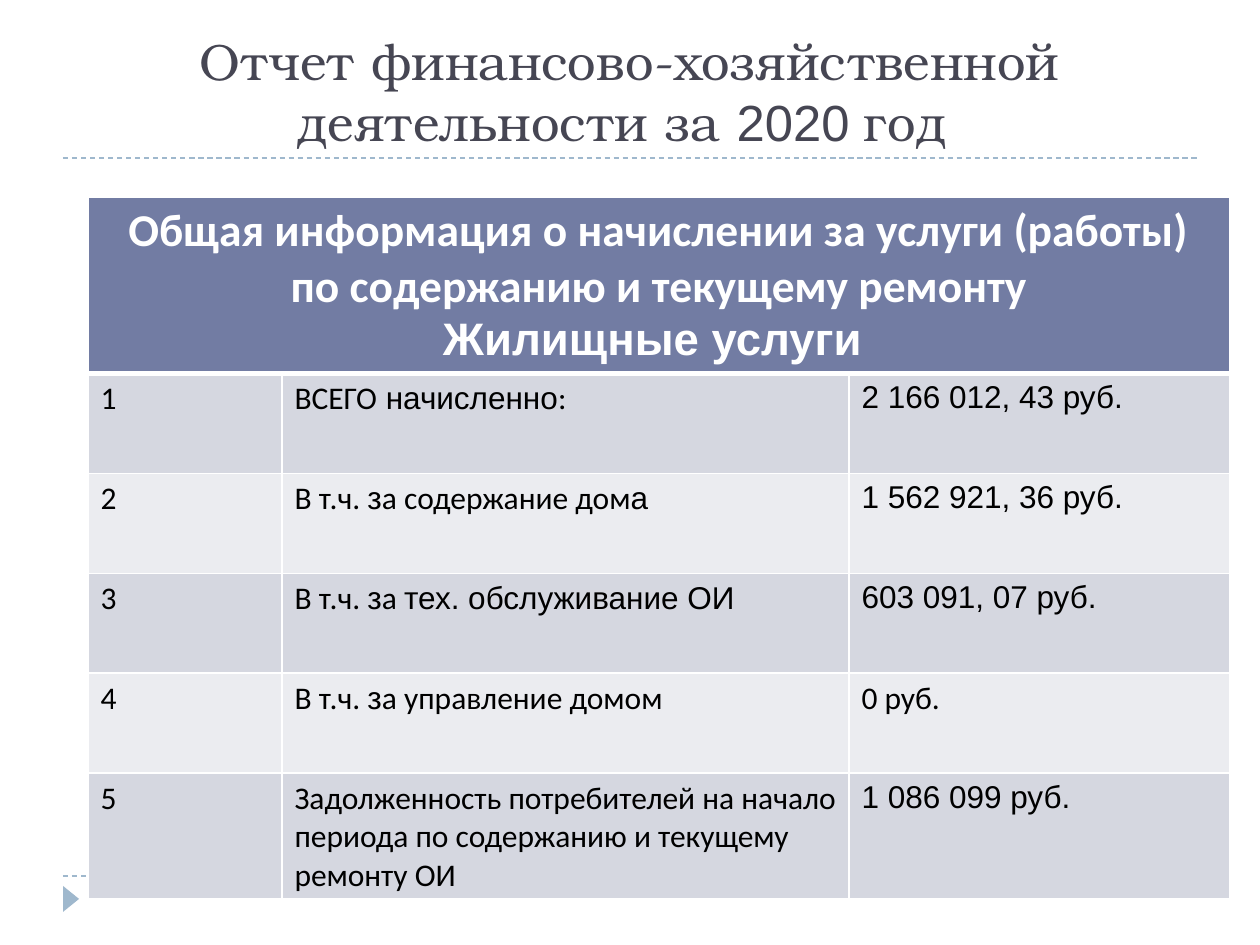
from dataclasses import dataclass

from lxml import etree
from pptx import Presentation
from pptx import util as u
from pptx.dml.color import RGBColor
from pptx.enum import dml, shapes, text
from pptx.oxml import ns

PX = 914400 // 126
SLIDE_SIZE = (1260, 945)


@dataclass(frozen=True)
class Theme:
    serif: str = "TeX Gyre Bonum"
    sans: str = "Arial"
    body: str = "Calibri"
    title: str = "464653"
    accent: str = "9FB8CD"
    header: str = "727CA3"
    bands: tuple = ("D5D7E0", "EBECF0")
    white: str = "FFFFFF"
    black: str = "000000"
    title_size: int = 29
    header_size: int = 26
    cell_size: int = 18


THEME = Theme()
SERIF, SANS, BODY = THEME.serif, THEME.sans, THEME.body

# A paragraph is a list of (wording, font) runs.
TITLE = [[("Отчет финансово-хозяйственной деятельности за ", SERIF),
          ("2020 ", SANS), ("год ", SERIF)]]
HEADER = [
    [("Общая информация о начислении за услуги (работы) "
      "по содержанию и текущему ремонту", BODY)],
    [("Жилищные услуги ", SANS)],
]
INCLUDING = [("В т.ч. ", BODY), ("з", SANS)]
ROWS = [
    ([("ВСЕГО", BODY), (" начисленно", SANS), (":", BODY)],
     [("2 166 012, 43 руб.", SANS)]),
    (INCLUDING + [("а содержание дом", BODY), ("а", SANS)],
     [("1 562 921, 36 руб.", SANS)]),
    (INCLUDING + [("а ", BODY), ("тех. обслуживание ОИ", SANS)],
     [("603 091, 07 руб.", SANS)]),
    (INCLUDING + [("а управление домом", BODY)],
     [("0 руб.", BODY)]),
    ([("Задолженность потребителей на начало периода по содержанию "
       "и текущему ремонту ОИ", BODY)],
     [("1 086 099 руб.", SANS)]),
]

TITLE_BOX = (63, 32, 1134, 126)
RULES_Y = (876, 158)
RULE_X = (63, 1197)
MARKER_BOX = (58, 891, 26, 16)
TABLE_AT = (88, 197)
COLUMNS = (194, 567, 381)
HEADER_HEIGHT, ROW_HEIGHT = 146, 100


def px(*values):
    return [u.Emu(value * PX) for value in values]


def write(frame, paragraphs, *, size, color, bold=False, align=None):
    frame.word_wrap = True
    for index, runs in enumerate(paragraphs):
        paragraph = frame.add_paragraph() if index else frame.paragraphs[0]
        paragraph.alignment = align
        for wording, font in runs:
            run = paragraph.add_run()
            run.text = wording
            run.font.name = font
            run.font.size = u.Pt(size)
            run.font.bold = bold
            run.font.color.rgb = RGBColor.from_string(color)


def add_rule(slide, y):
    left, right = RULE_X
    rule = slide.shapes.add_connector(
        shapes.MSO_CONNECTOR.STRAIGHT, *px(left, y, right, y))
    rule.line.color.rgb = RGBColor.from_string(THEME.accent)
    rule.line.width = u.Pt(0.75)
    rule.line.dash_style = dml.MSO_LINE.DASH
    etree.SubElement(rule._element.spPr, ns.qn("a:effectLst"))


def add_marker(slide):
    marker = slide.shapes.add_shape(
        shapes.MSO_SHAPE.ISOSCELES_TRIANGLE, *px(*MARKER_BOX))
    marker.rotation = 90
    marker.shadow.inherit = False
    marker.fill.solid()
    marker.fill.fore_color.rgb = RGBColor.from_string(THEME.accent)
    marker.line.fill.background()


def paint_cell(cell, fill, top=1, bottom=1):
    """Fill a cell and give it white borders, widths in points."""
    cell.fill.solid()
    cell.fill.fore_color.rgb = RGBColor.from_string(fill)
    properties = cell._tc.get_or_add_tcPr()
    widths = {"lnL": 1, "lnR": 1, "lnT": top, "lnB": bottom}
    for index, (side, width) in enumerate(widths.items()):
        border = etree.Element(ns.qn(f"a:{side}"), w=str(u.Pt(width)))
        solid = etree.SubElement(border, ns.qn("a:solidFill"))
        etree.SubElement(solid, ns.qn("a:srgbClr"), val=THEME.white)
        properties.insert(index, border)


def add_report_table(slide):
    heights = [HEADER_HEIGHT] + [ROW_HEIGHT] * len(ROWS)
    table = slide.shapes.add_table(
        len(heights), len(COLUMNS),
        *px(*TABLE_AT, sum(COLUMNS), sum(heights))).table
    for column, width in zip(table.columns, px(*COLUMNS)):
        column.width = width
    for row, height in zip(table.rows, px(*heights)):
        row.height = height

    for cell in table.rows[0].cells:
        paint_cell(cell, THEME.header, bottom=3)
    table.cell(0, 0).merge(table.cell(0, len(COLUMNS) - 1))
    write(table.cell(0, 0).text_frame, HEADER, size=THEME.header_size,
          color=THEME.white, bold=True, align=text.PP_ALIGN.CENTER)

    for number, (label, amount) in enumerate(ROWS, start=1):
        contents = ([(str(number), BODY)], label, amount)
        for cell, runs in zip(table.rows[number].cells, contents):
            paint_cell(cell, THEME.bands[(number - 1) % 2],
                       top=3 if number == 1 else 1)
            write(cell.text_frame, [runs], size=THEME.cell_size,
                  color=THEME.black)


def main():
    presentation = Presentation()
    presentation.slide_width, presentation.slide_height = px(*SLIDE_SIZE)
    slide = presentation.slides.add_slide(presentation.slide_layouts[6])
    for y in RULES_Y:
        add_rule(slide, y)
    add_marker(slide)
    title = slide.shapes.add_textbox(*px(*TITLE_BOX)).text_frame
    title.vertical_anchor = text.MSO_ANCHOR.BOTTOM
    write(title, TITLE, size=THEME.title_size, color=THEME.title,
          align=text.PP_ALIGN.CENTER)
    add_report_table(slide)
    presentation.save("out.pptx")


if __name__ == "__main__":
    main()
